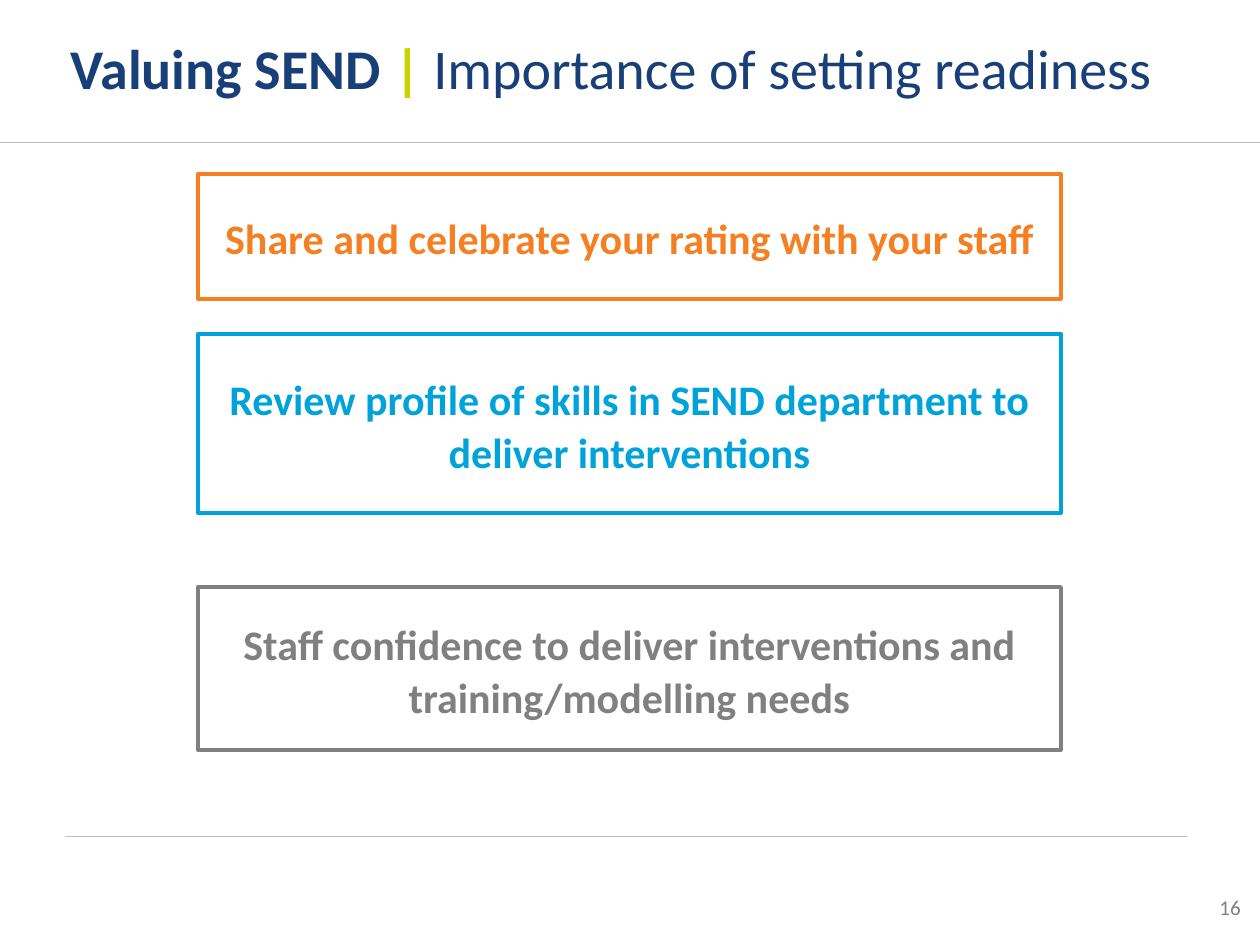
import pptx
import pptx.util
import pptx.dml.color
import pptx.enum.shapes
import pptx.enum.text
import pptx.oxml.ns
import lxml.etree

Inches = pptx.util.Inches
Pt = pptx.util.Pt
MIDDLE = pptx.enum.text.MSO_ANCHOR.MIDDLE
NAVY, LIME, GREY = "193F78", "C9D300", "808080"


def tint(code):
    return pptx.dml.color.RGBColor.from_string(code)


class Deck:
    face = "Calibri"
    rule_tint = "BFBFBF"

    def __init__(self, slide):
        self.slide = slide

    def style(self, run, size, color, bold=False):
        run.font.name = self.face
        run.font.size = Pt(size)
        run.font.bold = bold
        run.font.color.rgb = tint(color)

    def rule(self, left, right, top, weight):
        line = self.slide.shapes.add_connector(
            pptx.enum.shapes.MSO_CONNECTOR.STRAIGHT,
            Inches(left), Inches(top), Inches(right), Inches(top))
        line.line.color.rgb = tint(self.rule_tint)
        line.line.width = Pt(weight)
        props = line._element.spPr
        lxml.etree.SubElement(props, pptx.oxml.ns.qn("a:effectLst"))

    def title(self, left, top, width, height, parts):
        box = self.slide.shapes.add_textbox(
            Inches(left), Inches(top), Inches(width), Inches(height))
        frame = box.text_frame
        frame.word_wrap = True
        frame.vertical_anchor = MIDDLE
        frame.margin_left = frame.margin_right = 0
        frame.margin_top = frame.margin_bottom = 0
        line = frame.paragraphs[0]
        line.line_spacing = 0.9
        for text, color, bold in parts:
            run = line.add_run()
            run.text = text
            self.style(run, 32, color, bold)

    def number(self, left, top, width, height, text):
        box = self.slide.shapes.add_textbox(
            Inches(left), Inches(top), Inches(width), Inches(height))
        box.text_frame.text = text
        box.text_frame.word_wrap = True
        self.style(box.text_frame.paragraphs[0].runs[0], 12, GREY)

    def panel(self, left, top, width, height, text, color):
        box = self.slide.shapes.add_shape(
            pptx.enum.shapes.MSO_SHAPE.RECTANGLE,
            Inches(left), Inches(top), Inches(width), Inches(height))
        box.shadow.inherit = False
        box.fill.solid()
        box.fill.fore_color.rgb = tint("FFFFFF")
        box.line.color.rgb = tint(color)
        box.line.width = Pt(2.25)
        frame = box.text_frame
        frame.text = text
        frame.word_wrap = True
        frame.vertical_anchor = MIDDLE
        line = frame.paragraphs[0]
        line.alignment = pptx.enum.text.PP_ALIGN.CENTER
        line.line_spacing = 1.07
        line.space_after = Pt(8)
        self.style(line.runs[0], 24, color, True)


def main():
    show = pptx.Presentation()
    show.slide_width = Inches(10)
    show.slide_height = Inches(7.5)
    deck = Deck(show.slides.add_slide(show.slide_layouts[6]))

    deck.number(9.58, 7.05, 0.55, 0.3, "16")
    deck.rule(0.52, 9.42, 6.64, 0.25)
    deck.rule(0, 10, 1.13, 0.5)
    deck.title(0.56, 0, 8.8, 1.13, [
        ("Valuing SEND ", NAVY, True),
        ("| ", LIME, True),
        ("Importance of setting readiness", NAVY, False),
    ])

    steps = [
        (1.38, 0.99, "F58023",
         "Share and celebrate your rating with your staff"),
        (2.65, 1.42, "00A3D9",
         "Review profile of skills in SEND department to deliver interventions"),
        (4.66, 1.29, GREY,
         "Staff confidence to deliver interventions and training/modelling needs"),
    ]
    for top, height, color, text in steps:
        deck.panel(1.57, top, 6.85, height, text, color)

    show.save("out.pptx")


if __name__ == "__main__":
    main()
